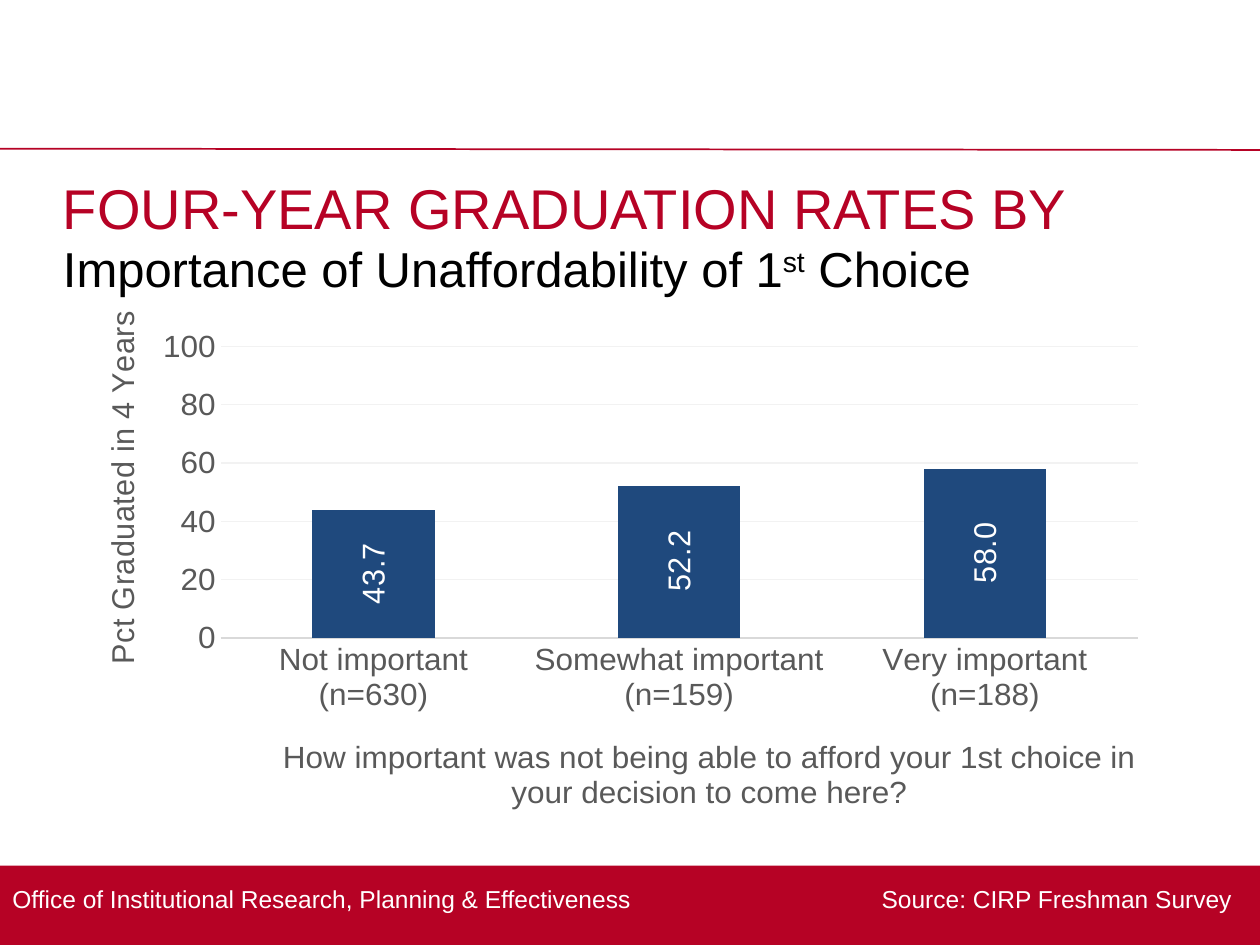
from lxml import etree
from pptx import Presentation
from pptx.chart.data import CategoryChartData
from pptx.dml.color import RGBColor
from pptx.enum import chart as ch, shapes, text
from pptx.oxml import parse_xml
from pptx.oxml.ns import nsdecls, qn
from pptx.util import Inches, Pt

COLORS = {"red": "B60225", "white": "FFFFFF", "black": "000000", "bar": "1F497D",
          "label": "595959", "axis": "D9D9D9", "grid": "F2F2F2"}
W, H = 10, 7.5
MARGIN, BODY_W = 0.5, 9


def style(font, size, color):
    for name, value in {"name": "Arial", "size": Pt(size), "bold": False}.items():
        setattr(font, name, value)
    font.color.rgb = RGBColor.from_string(COLORS[color])


def stroke(line, color, width):
    line.color.rgb = RGBColor.from_string(COLORS[color])
    line.width = Pt(width)


prs = Presentation()
prs.slide_width, prs.slide_height = Inches(W), Inches(H)
s = prs.slides.add_slide(prs.slide_layouts[6])

# Footer band and header rule
band = s.shapes.add_shape(shapes.MSO_SHAPE.RECTANGLE, 0, Inches(6.87), Inches(W), Inches(0.63))
band.shadow.inherit = False
band.fill.solid()
band.fill.fore_color.rgb = RGBColor.from_string(COLORS["red"])
band.line.fill.background()

rule = s.shapes.add_connector(shapes.MSO_CONNECTOR.STRAIGHT,
                              0, Inches(1.18), Inches(W), Inches(1.19))
stroke(rule.line, "red", 1)
etree.SubElement(rule._element.spPr, qn("a:effectLst"))

# Text boxes: left, top, width, height, side inset, top inset, anchor, size, colour, runs
TOP, MIDDLE = text.MSO_ANCHOR.TOP, text.MSO_ANCHOR.MIDDLE
boxes = [
    (0, 6.88, W, 0.51, 0.1, 0.05, MIDDLE, 14, "white",
     ["Office of Institutional Research, Planning & Effectiveness\tSource: CIRP Freshman Survey"]),
    (MARGIN, 1.85, BODY_W, 0.45, 0, 0.04, TOP, 28, "black",
     ["Importance of Unaffordability of 1", "st", " Choice"]),
    (MARGIN, 1.29, BODY_W, 0.87, 0, 0.09, TOP, 32, "red",
     ["FOUR-YEAR GRADUATION RATES BY"]),
]
for left, top, width, height, side, inset, anchor, size, color, runs in boxes:
    sp = s.shapes.add_textbox(*map(Inches, (left, top, width, height)))
    tf = sp.text_frame
    for name, value in {"word_wrap": True, "vertical_anchor": anchor,
                        "margin_left": Inches(side), "margin_right": Inches(side),
                        "margin_top": Inches(inset)}.items():
        setattr(tf, name, value)
    p = tf.paragraphs[0]
    if "\t" in runs[0]:  # the source credit is right-aligned on a tab stop
        p._p.get_or_add_pPr().append(parse_xml(
            f'<a:tabLst {nsdecls("a")}><a:tab pos="{Inches(9.68)}" algn="r"/></a:tabLst>'))
    for words in runs:
        r = p.add_run()
        r.text = words
        style(r.font, size, color)
        if words == "st":
            r.font._element.set("baseline", "30000")

# Chart
data = CategoryChartData(number_format="0.0")
data.categories = ["Not important\n(n=630)", "Somewhat important\n(n=159)",
                   "Very important\n(n=188)"]
data.add_series("Series 1", [43.7, 52.2, 58.0])
chart = s.shapes.add_chart(ch.XL_CHART_TYPE.COLUMN_CLUSTERED, Inches(0.49), Inches(2.5),
                           Inches(BODY_W), Inches(4), data).chart
style(chart.font, 18, "black")
chart.has_legend = chart.has_title = False

# Bars and their upright labels
plot = chart.plots[0]
plot.gap_width, plot.overlap, plot.vary_by_categories = 150, -27, False
fill = plot.series[0].format.fill
fill.solid()
fill.fore_color.rgb = RGBColor.from_string(COLORS["bar"])
plot.has_data_labels = True
labels = plot.data_labels
for name, value in {"show_value": True, "number_format": "#,##0.0",
                    "number_format_is_linked": False,
                    "position": ch.XL_LABEL_POSITION.CENTER}.items():
    setattr(labels, name, value)
style(labels.font, 18, "white")
labels._element.find(qn("c:txPr")).find(qn("a:bodyPr")).set("rot", "-5400000")

# Axes
cat, val = chart.category_axis, chart.value_axis
titles = [(cat, "How important was not being able to afford your 1st choice in "
                "your decision to come here?", 0.19, 0.85),
          (val, "Pct Graduated in 4 Years", 0.03, 0)]
layouts = [(chart._chartSpace.chart.plotArea,
            {"layoutTarget": "inner", "xMode": "edge", "yMode": "edge",
             "x": 0.14, "y": 0.064, "w": 0.809, "h": 0.595})]
for axis, words, x, y in titles:
    style(axis.tick_labels.font, 18, "label")
    axis.major_tick_mark = axis.minor_tick_mark = ch.XL_TICK_MARK.NONE
    tf = axis.axis_title.text_frame
    tf.text = words
    style(tf.paragraphs[0].runs[0].font, 18, "label")
    layouts.append((axis.axis_title._element,
                    {"xMode": "edge", "yMode": "edge", "x": x, "y": y}))
val.axis_title.text_frame._txBody.find(qn("a:bodyPr")).set("rot", "-5400000")
stroke(cat.format.line, "axis", 0.75)
val.minimum_scale, val.maximum_scale, val.major_unit = 0, 100, 20
val.tick_labels.number_format, val.tick_labels.number_format_is_linked = "0", False
val.format.line.fill.background()
val.has_major_gridlines = True
stroke(val.major_gridlines.format.line, "grid", 0.75)

# Fixed places for the plot area and axis titles
for parent, values in layouts:
    for old in parent.findall(qn("c:layout")):
        parent.remove(old)
    layout = etree.Element(qn("c:layout"))
    manual = etree.SubElement(layout, qn("c:manualLayout"))
    for name, value in values.items():
        etree.SubElement(manual, qn("c:" + name)).set("val", str(value))
    tx = parent.find(qn("c:tx"))
    parent.insert(0 if tx is None else 1, layout)

prs.save("out.pptx")
